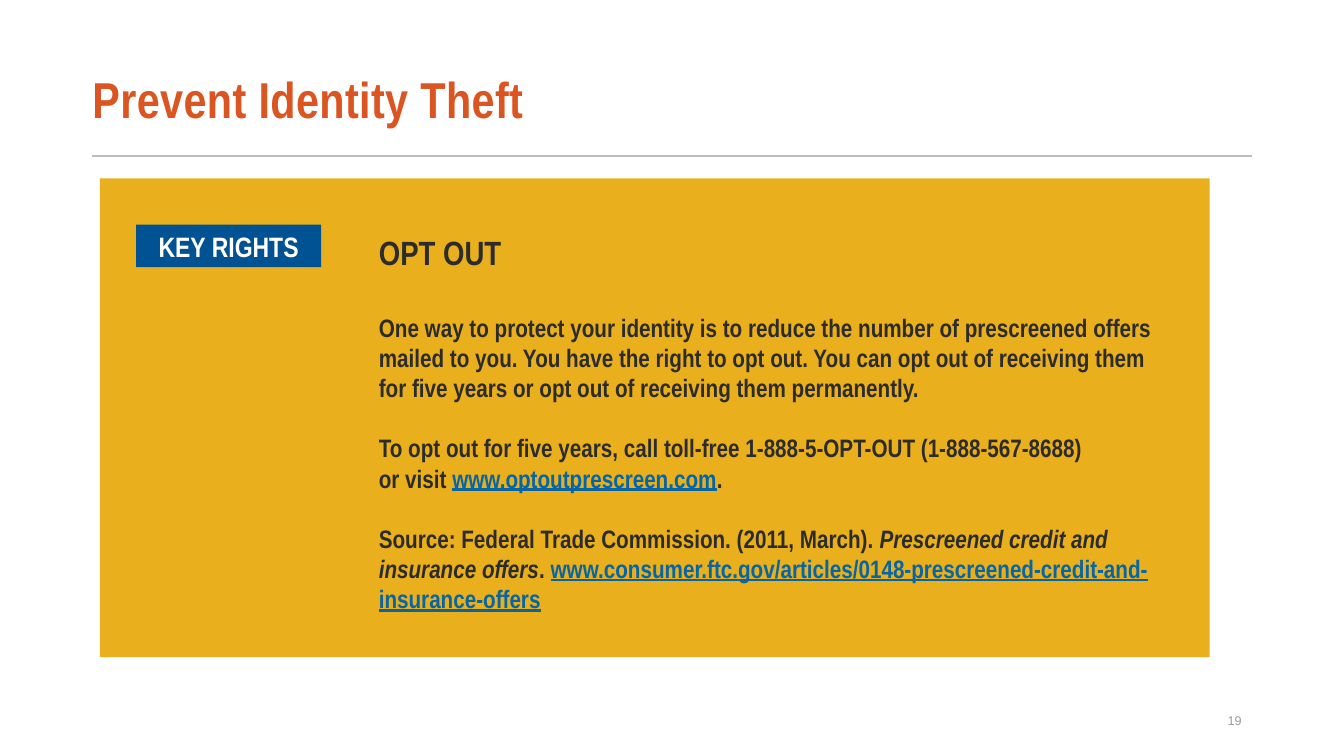
from pptx import Presentation
from pptx.dml.color import RGBColor
from pptx.enum.shapes import MSO_CONNECTOR, MSO_SHAPE
from pptx.enum.text import MSO_ANCHOR, PP_ALIGN
from pptx.oxml.ns import qn
from pptx.util import Pt

RECT = MSO_SHAPE.RECTANGLE
LINE = MSO_CONNECTOR.STRAIGHT
MID = MSO_ANCHOR.MIDDLE
LEFT, MIDDLE, RIGHT = PP_ALIGN.LEFT, PP_ALIGN.CENTER, PP_ALIGN.RIGHT
NARROW = "Arial Narrow"
DARK, BLUE = "2C2C2C", "0665A4"

# Paragraphs: size, space before, pieces of (text, style)
RIGHTS = [
    (24, 0, [("OPT OUT", "")]),
    (18, 28.5, [("One way to protect your identity is to reduce the number of "
                 "prescreened offers mailed to you. You have the right to opt out. "
                 "You can opt out of receiving them for five years or opt out of "
                 "receiving them permanently.", "")]),
    (18, 21.5, [("To opt out for five years, call toll-free 1-888-5-OPT-OUT "
                 "(1-888-567-8688)\nor visit ", ""),
                ("www.optoutprescreen.com", "link"), (".", "")]),
    (18, 21.5, [("Source: Federal Trade Commission. (2011, March). ", ""),
                ("Prescreened credit and insurance offers", "italic"), (". ", ""),
                ("www.consumer.ftc.gov/articles/"
                 "0148-prescreened-credit-and-insurance-offers", "link")]),
]


def tint(code):
    return RGBColor.from_string(code)


def style(run, size, color, face=NARROW, bold=True):
    font = run.font
    font.name, font.size, font.bold = face, Pt(size), bold
    font.color.rgb = tint(color)


def block(slide, box, fill):
    shape = slide.shapes.add_shape(RECT, *map(Pt, box))
    shape.shadow.inherit = False
    shape.fill.solid()
    shape.fill.fore_color.rgb = tint(fill)
    shape.line.fill.background()
    return shape


def head(slide, box, text):
    """Title with a rule below it."""
    left, top, width, height = box
    title = slide.shapes.title
    title.left, title.top, title.width, title.height = map(Pt, box)
    frame = title.text_frame
    frame.text = text
    frame.margin_left = 0
    frame.vertical_anchor = MID
    para = frame.paragraphs[0]
    para.alignment, para.line_spacing = LEFT, 0.9
    style(para.runs[0], 36, "DA5521")
    para.runs[0]._r.get_or_add_rPr().set("spc", "30")

    base = top + height + 4
    rule = slide.shapes.add_connector(
        LINE, Pt(left), Pt(base), Pt(left + width), Pt(base))
    rule.line.color.rgb = tint("BDBDBD")
    rule.line.width = Pt(1.5)
    props = rule._element.spPr
    props.append(props.makeelement(qn("a:effectLst"), {}))


def panel(slide, box, label, paras):
    """Yellow panel with a badge and the text on the right."""
    left, top, width, height = box
    block(slide, box, "E9AF1D")

    # Badge
    badge = block(slide, (left + 26, top + 33, 132, 30.4), "005293")
    frame = badge.text_frame
    frame.text = label
    frame.word_wrap = False
    frame.vertical_anchor = MID
    frame.paragraphs[0].alignment = MIDDLE
    style(frame.paragraphs[0].runs[0], 20, "FFFFFF")

    # Text
    area = (left + 192.2, top + 34.6, 574.6, 283.7)
    frame = slide.shapes.add_textbox(*map(Pt, area)).text_frame
    frame.word_wrap = True
    for i, (size, gap, parts) in enumerate(paras):
        para = frame.add_paragraph() if i else frame.paragraphs[0]
        para.space_before = Pt(gap)
        para.text = parts[0][0]
        for run in para.runs:
            style(run, size, DARK)
        for text, kind in parts[1:]:
            run = para.add_run()
            run.text = text
            style(run, size, BLUE if kind == "link" else DARK)
            run.font.underline = kind == "link"
            run.font.italic = kind == "italic"


def foot(slide, box, text):
    """Page number."""
    frame = slide.shapes.add_textbox(*map(Pt, box)).text_frame
    frame.text = text
    frame.word_wrap = True
    frame.vertical_anchor = MID
    frame.paragraphs[0].alignment = RIGHT
    style(frame.paragraphs[0].runs[0], 9, "9B9B9B", "Arial", False)


def main():
    deck = Presentation()
    deck.slide_width, deck.slide_height = Pt(960), Pt(540)
    slide = deck.slides.add_slide(deck.slide_layouts[5])
    head(slide, (66, 38.8, 828, 68.4), "Prevent Identity Theft")
    panel(slide, (71.3, 127.4, 792.7, 342), "KEY RIGHTS", RIGHTS)
    foot(slide, (678, 500.4, 216, 28.8), "19")
    deck.save("out.pptx")


if __name__ == "__main__":
    main()
